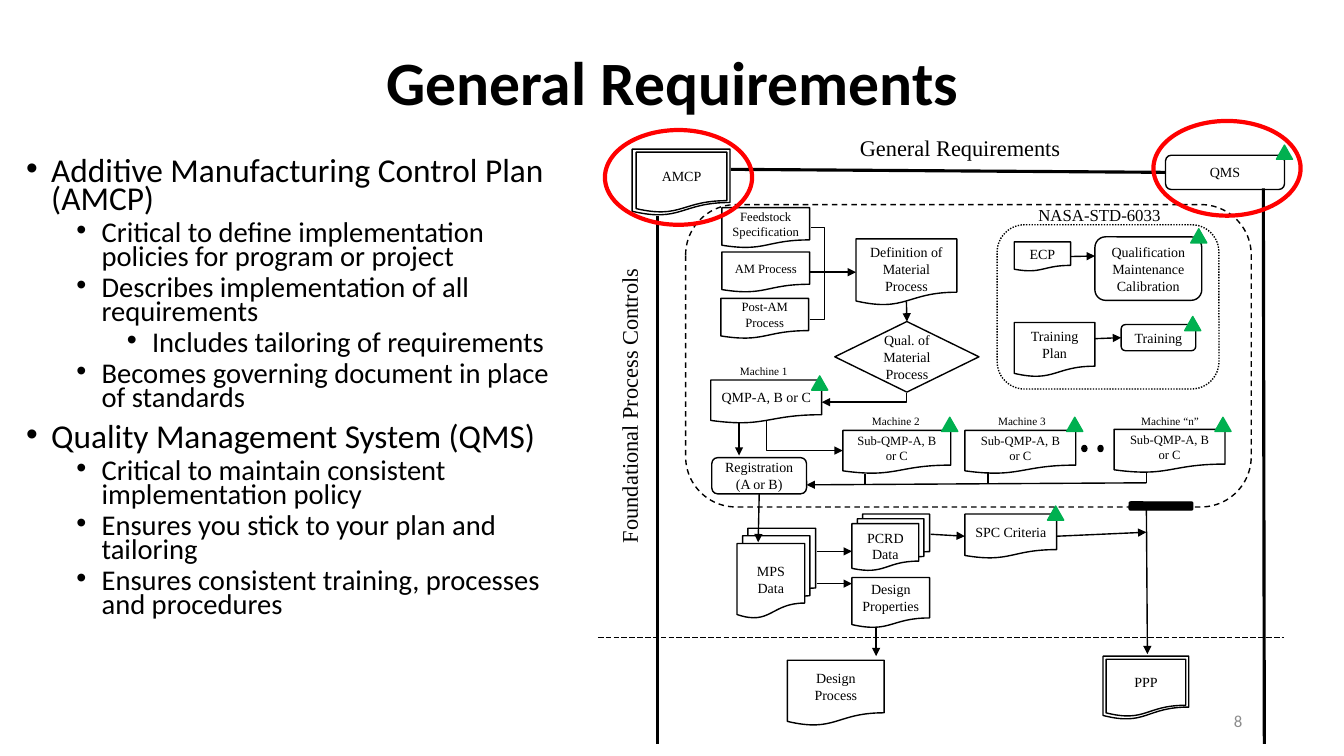
from dataclasses import dataclass

from lxml import etree
from pptx import Presentation
from pptx.dml.color import RGBColor
from pptx.enum.dml import MSO_LINE
from pptx.enum.shapes import MSO_CONNECTOR, MSO_SHAPE
from pptx.enum.text import MSO_ANCHOR, MSO_AUTO_SIZE, PP_ALIGN
from pptx.oxml.ns import qn
from pptx.util import Inches, Pt

COLORS = {"ink": "000000", "approval": "00B050", "highlight": "FF0000", "page": "8C8C8C"}
SANS, SERIF = "Calibri", "Times New Roman"
DOC, MULTI = MSO_SHAPE.FLOWCHART_DOCUMENT, MSO_SHAPE.FLOWCHART_MULTIDOCUMENT
PROCESS, DECISION = MSO_SHAPE.FLOWCHART_ALTERNATE_PROCESS, MSO_SHAPE.FLOWCHART_DECISION
TRIANGLE, OVAL, ROUNDED = MSO_SHAPE.ISOSCELES_TRIANGLE, MSO_SHAPE.OVAL, MSO_SHAPE.ROUNDED_RECTANGLE
STRAIGHT, ELBOW = MSO_CONNECTOR.STRAIGHT, MSO_CONNECTOR.ELBOW
DASH, LONG_DASH, DOTTED = MSO_LINE.DASH, MSO_LINE.LONG_DASH, MSO_LINE.ROUND_DOT
TOP, MIDDLE = MSO_ANCHOR.TOP, MSO_ANCHOR.MIDDLE
LEFT, CENTER, RIGHT = PP_ALIGN.LEFT, PP_ALIGN.CENTER, PP_ALIGN.RIGHT
FIT = MSO_AUTO_SIZE.SHAPE_TO_FIT_TEXT
SITE_TOP, SITE_LEFT, SITE_BOTTOM, SITE_RIGHT = range(4)
TIGHT = 0.03

Box = tuple[float, float, float, float]
Point = tuple[float, float]


@dataclass
class Node:
    key: str
    form: int
    box: Box
    text: str = ""
    size: float = 10
    inset: float = 0.1
    anchor: int = MIDDLE


@dataclass
class Outline:
    form: int
    box: Box
    color: str = "ink"
    width: float = 1
    dash: int | None = None
    filled: bool = False


@dataclass
class Link:
    start: Point
    end: Point
    arrow: bool = True
    width: float = 1
    dash: int | None = None
    source: tuple[str, int] | None = None
    target: tuple[str, int] | None = None


@dataclass
class Label:
    text: str
    box: Box
    size: float
    rotation: float = 0


NODES = [
    Node("amcp", DOC, (6.31, 1.51, 0.9, 0.6), "AMCP"),
    Node("qms", PROCESS, (11.56, 1.54, 1.18, 0.34), "QMS"),
    Node("feedstock", DOC, (7.16, 2.06, 0.87, 0.4), "Feedstock\nSpecification", 9, TIGHT),
    Node("am process", DOC, (7.16, 2.5, 0.87, 0.4), "AM Process", 9, TIGHT),
    Node("post-am", DOC, (7.15, 2.96, 0.87, 0.4), "Post-AM Process", 9),
    Node("definition", DOC, (8.49, 2.37, 1, 0.66), "Definition of\nMaterial Process", anchor=TOP),
    Node("qualification", DECISION, (8.28, 3.19, 1.43, 0.7), "Qual. of Material Process", inset=TIGHT),
    Node("ecp", DOC, (10.06, 2.4, 0.56, 0.29), "ECP", inset=TIGHT),
    Node("maintenance", PROCESS, (10.86, 2.35, 1.06, 0.63),
         "Qualification Maintenance Calibration", inset=TIGHT),
    Node("training plan", DOC, (10.06, 3.2, 0.8, 0.54), "Training Plan"),
    Node("training", PROCESS, (11.12, 3.22, 0.74, 0.26), "Training", inset=TIGHT),
    Node("machine 1", DOC, (7.05, 3.77, 1.1, 0.43), "QMP-A, B or C", inset=TIGHT),
    Node("machine 2", DOC, (8.36, 4.27, 1.07, 0.43), "Sub-QMP-A, B or C", 9),
    Node("machine 3", DOC, (9.57, 4.27, 1.1, 0.43), "Sub-QMP-A, B or C", 9),
    Node("machine n", DOC, (11.05, 4.26, 1.1, 0.43), "Sub-QMP-A, B or C", 9),
    Node("registration", PROCESS, (7.06, 4.54, 0.94, 0.36), "Registration\n(A or B)", inset=TIGHT),
    Node("mps", MULTI, (7.31, 5.24, 0.78, 0.89), "MPS\nData", inset=TIGHT),
    Node("pcrd", MULTI, (8.45, 5.1, 0.77, 0.56), "PCRD\nData", inset=TIGHT),
    Node("spc", DOC, (9.57, 5.1, 0.91, 0.44), "SPC Criteria", inset=TIGHT),
    Node("properties", DOC, (8.45, 5.73, 0.77, 0.5), "Design\nProperties", inset=TIGHT),
    Node("design", DOC, (7.81, 6.55, 0.96, 0.65), "Design Process"),
    Node("ppp", DOC, (10.97, 6.54, 0.79, 0.57), "PPP"),
]
APPROVALS = [(12.66, 1.44), (11.81, 2.27), (11.75, 3.14), (8.05, 3.73), (9.34, 4.14),
             (10.58, 4.14), (12.05, 4.14), (10.39, 5.02)]
OUTLINES = [
    Outline(DOC, (6.27, 1.48, 0.97, 0.66)),
    Outline(DOC, (10.94, 6.51, 0.85, 0.63)),
    *[Outline(TRIANGLE, (x, y, 0.16, 0.14), "approval", filled=True) for x, y in APPROVALS],
    *[Outline(OVAL, (x, 4.42, 0.05, 0.06), filled=True) for x in (10.73, 10.89)],
    Outline(ROUNDED, (11.2, 4.98, 0.63, 0.08), filled=True),
    Outline(ROUNDED, (9.89, 2.23, 2.2, 1.63), dash=DOTTED),
    Outline(PROCESS, (6.8, 2.03, 5.61, 3), dash=DASH),
    Outline(OVAL, (11.44, 1.2, 1.46, 0.94), "highlight", 3),
    Outline(OVAL, (6, 1.29, 1.46, 0.94), "highlight", 3),
]
LINKS = [
    Link((5.93, 6.32), (12.73, 6.32), False, 0.5, LONG_DASH),
    Link((6.52, 2.14), (6.52, 7.38), False, 2.25),
    Link((12.53, 1.87), (12.54, 7.38), False, 2.25),
    Link((7.25, 1.68), (11.56, 1.7), False, 2.25, target=("qms", SITE_LEFT)),
    Link((8.03, 2.7), (8.49, 2.7), source=("am process", SITE_RIGHT), target=("definition", SITE_LEFT)),
    Link((8.99, 2.99), (8.99, 3.19), target=("qualification", SITE_TOP)),
    Link((10.62, 2.55), (10.86, 2.54), source=("ecp", SITE_RIGHT)),
    Link((10.86, 3.36), (11.12, 3.35), target=("training", SITE_LEFT)),
    Link((7.33, 4.19), (7.33, 4.52)),
    Link((7.53, 4.9), (7.52, 5.38), source=("registration", SITE_BOTTOM)),
    Link((11.37, 4.79), (8, 4.81)),
    *[Link((x, y), (x, y - 0.11), False) for x, y in ((11.37, 4.79), (9.8, 4.79), (8.58, 4.81))],
    Link((8.1, 5.47), (8.45, 5.47)),
    Link((8.1, 5.79), (8.45, 5.79)),
    Link((9.23, 5.3), (9.57, 5.32), target=("spc", SITE_LEFT)),
    Link((10.48, 5.32), (11.37, 5.28), source=("spc", SITE_RIGHT)),
    Link((8.69, 6.23), (8.69, 6.51)),
    Link((11.37, 4.99), (11.38, 6.49)),
]
CORNERS = [((8.15, 3.99), (8.99, 3.9)), ((8.36, 4.47), (7.6, 4.18))]
LABELS = [
    Label("General Requirements", (8.43, 1.28, 2.22, 0.37), 16),
    Label("Foundational Process Controls", (4.76, 3.82, 2.96, 0.37), 16, 270),
    Label("NASA-STD-6033", (10.2, 1.98, 1.42, 0.3), 12),
    Label("Machine 1", (7.24, 3.57, 0.68, 0.24), 8),
    Label("Machine 2", (8.55, 4.06, 0.68, 0.24), 8),
    Label("Machine 3", (9.8, 4.06, 0.68, 0.24), 8),
    Label("Machine “n”", (11.22, 4.06, 0.78, 0.24), 8),
]
REQUIREMENTS = [
    (0, "Additive Manufacturing Control Plan (AMCP)"),
    (1, "Critical to define implementation policies for program or project"),
    (1, "Describes implementation of all requirements"),
    (2, "Includes tailoring of requirements"),
    (1, "Becomes governing document in place of standards"),
    (0, "Quality Management System (QMS)"),
    (1, "Critical to maintain consistent implementation policy"),
    (1, "Ensures you stick to your plan and tailoring"),
    (1, "Ensures consistent training, processes and procedures"),
]


def apply(target, values: dict) -> None:
    for attribute, value in values.items():
        setattr(target, attribute, value)


def rgb(color: str) -> RGBColor:
    return RGBColor.from_string(COLORS[color])


def write(frame, text: str, size: float, font: str = SERIF, color: str = "ink",
          bold: bool = False, paragraph: dict | None = None) -> None:
    frame.text = text
    for item in frame.paragraphs:
        apply(item, paragraph or {})
        apply(item.font, {"name": font, "size": Pt(size), "bold": bold})
        item.font.color.rgb = rgb(color)


def style_line(line, color: str, width: float, dash: int | None) -> None:
    line.color.rgb = rgb(color)
    apply(line, {"width": Pt(width), "dash_style": dash})


def draw_outline(shapes, outline: Outline):
    shape = shapes.add_shape(outline.form, *map(Inches, outline.box))
    shape.shadow.inherit = False
    style_line(shape.line, outline.color, outline.width, outline.dash)
    if outline.filled:
        shape.fill.solid()
        shape.fill.fore_color.rgb = rgb(outline.color)
    else:
        shape.fill.background()
    return shape


def draw_node(shapes, node: Node):
    shape = draw_outline(shapes, Outline(node.form, node.box))
    apply(shape.text_frame, {"word_wrap": True, "vertical_anchor": node.anchor,
                             "margin_left": Inches(node.inset), "margin_right": Inches(node.inset)})
    write(shape.text_frame, node.text, node.size, paragraph={"alignment": CENTER})
    return shape


def draw_link(shapes, link: Link, nodes: dict, kind: int = STRAIGHT, arrow_end: str = "tailEnd"):
    connector = shapes.add_connector(kind, *map(Inches, link.start + link.end))
    if link.source:
        connector.begin_connect(nodes[link.source[0]], link.source[1])
    if link.target:
        connector.end_connect(nodes[link.target[0]], link.target[1])
    style_line(connector.line, "ink", link.width, link.dash)
    properties = connector._element.spPr
    if link.arrow:
        etree.SubElement(properties.find(qn("a:ln")), qn(f"a:{arrow_end}"), type="triangle")
    etree.SubElement(properties, qn("a:effectLst"))
    return connector


def draw_elbows(shapes, nodes: dict) -> None:
    """Draw the feedstock bracket and the two single-corner arrows."""
    bracket = draw_link(shapes, Link((8.03, 3.17), (8.04, 2.26), False), nodes, ELBOW)
    guides = bracket._element.spPr.find(qn("a:prstGeom")).get_or_add_avLst()
    etree.SubElement(guides, qn("a:gd"), name="adj1", fmla="val 1500000")
    for tip, origin in CORNERS:
        corner = draw_link(shapes, Link(tip, origin), nodes, ELBOW, "headEnd")
        corner._element.spPr.find(qn("a:prstGeom")).set("prst", "bentConnector2")


def draw_label(shapes, label: Label) -> None:
    box = shapes.add_textbox(*map(Inches, label.box))
    box.rotation = label.rotation
    write(box.text_frame, label.text, label.size, paragraph={"alignment": LEFT})
    apply(box.text_frame, {"word_wrap": False, "auto_size": FIT})


def draw_requirements(shapes) -> None:
    frame = shapes.add_textbox(*map(Inches, (0.16, 1.54, 5.64, 4.76))).text_frame
    frame.word_wrap = True
    for index, (level, text) in enumerate(REQUIREMENTS):
        item = frame.add_paragraph() if index else frame.paragraphs[0]
        item.text = text
        properties = item._p.get_or_add_pPr()
        properties.set("marL", str(Inches(0.25 + 0.5 * level)))
        properties.set("indent", str(Inches(-0.25)))
        etree.SubElement(properties, qn("a:buFont"), typeface="Arial")
        etree.SubElement(properties, qn("a:buChar"), char="•")
        space = 0 if index == 0 else 5 if level else 10
        apply(item, {"level": level, "line_spacing": 0.7, "space_before": Pt(space)})
        apply(item.font, {"name": SANS, "size": Pt(20.4 if level else 23.8)})
        item.font.color.rgb = rgb("ink")


def main() -> None:
    deck = Presentation()
    apply(deck, {"slide_width": Inches(13.33), "slide_height": Inches(7.5)})
    slide = deck.slides.add_slide(deck.slide_layouts[5])
    shapes = slide.shapes
    title = shapes.title
    apply(title, dict(zip(("left", "top", "width", "height"), map(Inches, (0.92, 0.12, 11.5, 1.45)))))
    title.text_frame.vertical_anchor = MIDDLE
    write(title.text_frame, "General Requirements", 44, SANS, bold=True,
          paragraph={"alignment": CENTER, "line_spacing": 0.9})
    draw_requirements(shapes)
    page = shapes.add_textbox(*map(Inches, (9.42, 6.95, 3, 0.4))).text_frame
    apply(page, {"word_wrap": True, "vertical_anchor": MIDDLE})
    write(page, "8", 12, SANS, "page", paragraph={"alignment": RIGHT})

    nodes = {node.key: draw_node(shapes, node) for node in NODES}
    for link in LINKS:
        draw_link(shapes, link, nodes)
    draw_elbows(shapes, nodes)
    for outline in OUTLINES:
        draw_outline(shapes, outline)
    for label in LABELS:
        draw_label(shapes, label)
    deck.save("out.pptx")


if __name__ == "__main__":
    main()
